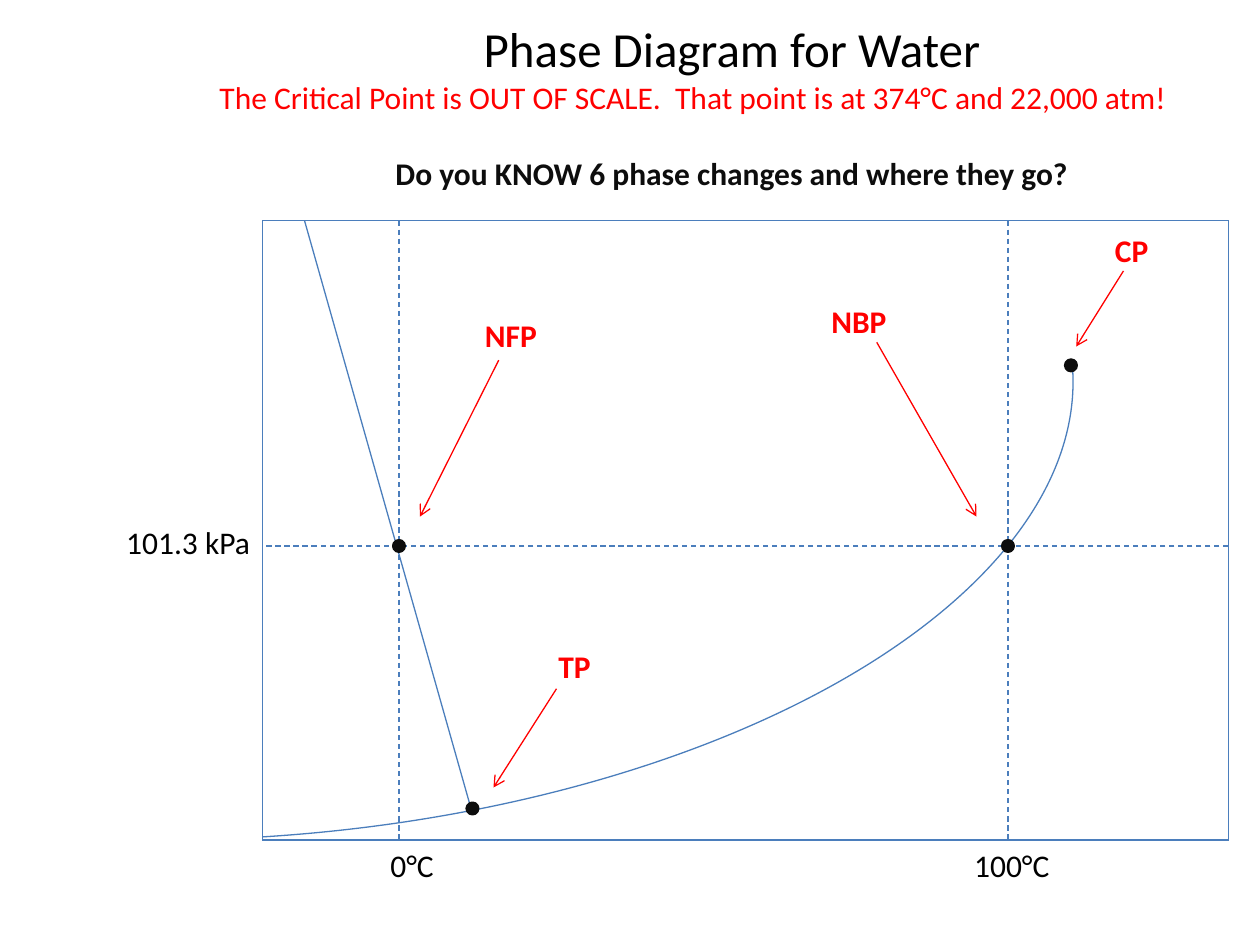
from pptx import Presentation
from pptx.dml.color import RGBColor
from pptx.enum.dml import MSO_LINE
from pptx.enum.shapes import MSO_CONNECTOR, MSO_SHAPE
from pptx.enum.text import MSO_ANCHOR, PP_ALIGN
from pptx.oxml.ns import qn
from pptx.util import Inches, Pt
from lxml import etree

BLUE = RGBColor(0x4B, 0x7E, 0xBC)
RED = RGBColor(0xFF, 0, 0)
BLACK = RGBColor(0, 0, 0)
INK = RGBColor(0x0D, 0x0D, 0x0D)
DASH = MSO_LINE.DASH
STRAIGHT = MSO_CONNECTOR.STRAIGHT
ARC, OVAL = MSO_SHAPE.ARC, MSO_SHAPE.OVAL
TOP = MSO_ANCHOR.TOP
LEFT, MID, RIGHT = PP_ALIGN.LEFT, PP_ALIGN.CENTER, PP_ALIGN.RIGHT

# The slide is a grid of 120 columns by 90 rows
COLS, ROWS = 120, 90


class Chart:
    font = "Calibri"
    size = 18
    thin = 0.75

    def __init__(self, deck):
        self.slide = deck.slides.add_slide(deck.slide_layouts[5])
        self.shapes = self.slide.shapes
        self.col = deck.slide_width / COLS
        self.row = deck.slide_height / ROWS

    def place(self, x, y, w, h):
        return (round(x * self.col), round(y * self.row),
                round(w * self.col), round(h * self.row))

    def style(self, para, color, size=None, bold=False, align=LEFT):
        para.alignment = align
        for run in para.runs:
            font = run.font
            font.name, font.size = self.font, Pt(size or self.size)
            font.bold, font.color.rgb = bold, color

    def title(self, box, lines):
        head = self.shapes.title
        head.left, head.top, head.width, head.height = self.place(*box)
        frame = head.text_frame
        frame.vertical_anchor = TOP
        frame.text = "\n".join(text for text, _ in lines)
        for para, (_, look) in zip(frame.paragraphs, lines):
            self.style(para, **look)
        return frame

    def label(self, text, x, y, w=11, color=BLACK, bold=False, align=LEFT):
        frame = self.shapes.add_textbox(*self.place(x, y, w, 4.8)).text_frame
        frame.word_wrap = True
        frame.text = text
        self.style(frame.paragraphs[0], color, bold=bold, align=align)

    def line(self, start, end, color=BLUE, dash=None):
        ends = self.place(*start, *end)
        link = self.shapes.add_connector(STRAIGHT, *ends)
        link.line.color.rgb, link.line.width = color, Pt(self.thin)
        if dash:
            link.line.dash_style = dash
        etree.SubElement(link._element.spPr, qn("a:effectLst"))
        return link

    def arrow(self, start, end):
        link = self.line(start, end, RED)
        tail = etree.SubElement(link.line._get_or_add_ln(), qn("a:tailEnd"))
        tail.set("type", "arrow")

    def dot(self, x, y, size=1):
        box = self.place(x - size / 2, y - size / 2, size, size)
        dot = self.shapes.add_shape(OVAL, *box)
        dot.shadow.inherit = False
        dot.fill.solid()
        dot.fill.fore_color.rgb = dot.line.color.rgb = INK
        dot.line.width = Pt(2)

    def curve(self, box, turn, start, end):
        arc = self.shapes.add_shape(ARC, *self.place(*box))
        arc.shadow.inherit = False
        arc.fill.background()
        arc.line.color.rgb, arc.line.width = BLUE, Pt(self.thin)
        arc.adjustments[0], arc.adjustments[1] = start, end
        arc.rotation = turn
        arc._element.spPr.xfrm.set("flipH", "1")


def main():
    deck = Presentation()
    deck.slide_width, deck.slide_height = Inches(10), Inches(7.5)
    chart = Chart(deck)

    # Heading
    head = chart.title((19.7, 1.2, 100, 17.8), [
        ("Phase Diagram for Water", dict(color=BLACK, size=28, align=MID)),
        ("The Critical Point is OUT OF SCALE.  That point is at 374°C and "
         "22,000 atm!", dict(color=RED)),
        ("Do you KNOW 6 phase changes and where they go?",
         dict(color=INK, bold=True, align=MID)),
    ])
    head.paragraphs[2].space_before = Pt(22)

    # Frame
    left, top, right, base = 25, 21, 117, 80
    corners = [(left, base), (left, top), (right, top), (right, base)]
    for start, end in zip(corners, corners[1:] + corners[:1]):
        chart.line(start, end)

    # Phase borders
    chart.curve((-54.36, 1.68, 156.72, 78), 175.8, 160.34, 0.07)
    chart.line((29, top), (45, 77.5))

    # Guides at freezing, boiling and normal pressure
    freeze, boil, normal = 38, 96, 52
    for x in (freeze, boil):
        chart.line((x, top), (x, base), dash=DASH)
    chart.line((right, normal), (left, normal), dash=DASH)

    # Named points: dot, label corner, arrow start and end
    points = [
        ("NFP", (freeze, normal), (45, 29.5), (47.5, 34.3), (40, 49.2)),
        ("NBP", (boil, normal), (78, 28.2), (83.5, 32.6), (93, 49.2)),
        ("TP", (45, 77), (52, 61), (53, 65.6), (47, 75)),
        ("CP", (102, 34.8), (105, 21.4), (107, 25.8), (102.5, 33)),
    ]
    for name, spot, corner, start, end in points:
        chart.dot(*spot)
        chart.label(name, *corner, color=RED, bold=True)
        chart.arrow(start, end)

    # Axis labels
    chart.label("101.3 kPa", 6, 49.2, 19, align=RIGHT)
    chart.label("0°C", 36, base)
    chart.label("100°C", 91.6, base)

    deck.save("out.pptx")


if __name__ == "__main__":
    main()
